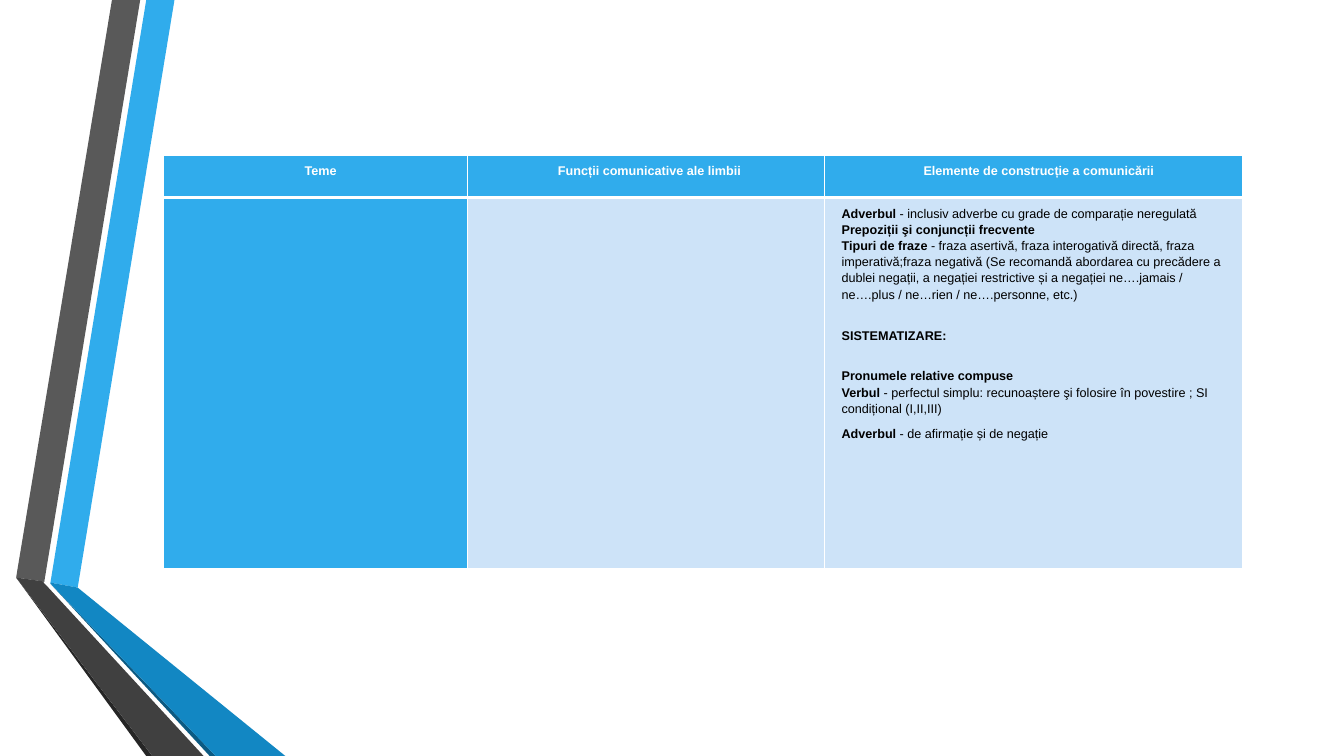
"""Build a slide with a ribbon at the left and a syllabus table."""
import copy
from typing import NamedTuple

import pptx
import pptx.dml.color
import pptx.enum.text
import pptx.oxml
import pptx.oxml.ns
import pptx.util

W, H = pptx.util.Inches(13.33), pptx.util.Inches(7.5)
BLUE, PALE, WHITE, BLACK = "30ACEC", "CDE3F8", "FFFFFF", "000000"
LEFT, TOP = 12.15, 20.53
COLS = (22.65, 26.55, 31.13)
ROWS = (5.6, 49.07)


class Band(NamedTuple):
    """A ribbon part, with points in percent of the slide."""
    color: str
    points: tuple[tuple[float, float], ...]


class Piece(NamedTuple):
    """A stretch of text in one weight; newlines are line breaks."""
    text: str
    bold: bool = False


BANDS = (
    Band(BLUE, ((3.75, 77.07), (5.78, 77.73), (12.98, 0), (10.88, 0))),
    Band("595959", ((10.43, 0), (8.33, 0), (1.2, 76.4), (3.3, 76.93))),
    Band("262626", ((1.2, 76.4), (10.88, 100), (11.33, 100))),
    Band("0C5A82", ((3.75, 77.2), (15.6, 100), (16.05, 100))),
    Band("1287C3", ((3.75, 77.2), (16.05, 100), (21.23, 100), (5.78, 77.73), (3.75, 77.07))),
    Band("404040", ((15.15, 100), (3.6, 77.73), (3.23, 77.07), (3.3, 76.93), (1.2, 76.4),
                    (11.33, 100))),
)
HEADERS = ("Teme", "Funcții comunicative ale limbii ", "Elemente de construcție a comunicării")
CONTENT = (
    (Piece("Adverbul", True),
     Piece(" - inclusiv adverbe cu grade de comparație neregulată \n"),
     Piece("Prepoziții şi conjuncții frecvente\nTipuri de fraze", True),
     Piece(" - fraza asertivă, fraza interogativă directă, fraza imperativă;fraza negativă "
           "(Se recomandă abordarea cu precădere a dublei negații, a negației restrictive "
           "și a negației ne….jamais / ne….plus / ne…rien / ne….personne, etc.)")),
    (Piece("\nSISTEMATIZARE:", True),),
    (Piece("\nPronumele relative compuse\nVerbul", True),
     Piece(" - perfectul simplu: recunoaștere şi folosire în povestire ; SI condițional (I,II,III)")),
    (Piece("Adverbul", True), Piece(" - de afirmație și de negație\n\n")),
)


def rgb(color: str) -> pptx.dml.color.RGBColor:
    return pptx.dml.color.RGBColor.from_string(color)


def across(share: float) -> int:
    return round(W * share / 100)


def down(share: float) -> int:
    return round(H * share / 100)


def draw_band(s, band: Band) -> None:
    (x, y), *rest = [(across(px), down(py)) for px, py in band.points]
    builder = s.shapes.build_freeform(x, y)
    builder.add_line_segments(rest, close=True)
    sp = builder.convert_to_shape()
    sp.shadow.inherit = False
    sp.fill.solid()
    sp.fill.fore_color.rgb = rgb(band.color)
    sp.line.fill.background()


def style_cell(cell, fill: str, top: int, bottom: int) -> None:
    cell.margin_left = cell.margin_right = pptx.util.Inches(0.07)
    cell.margin_top = cell.margin_bottom = pptx.util.Inches(0.07)
    cell.fill.solid()
    cell.fill.fore_color.rgb = rgb(fill)
    ns = pptx.oxml.ns.nsdecls("a")
    borders = (("lnL", 1), ("lnR", 1), ("lnT", top), ("lnB", bottom))
    for i, (side, width) in enumerate(borders):
        cell._tc.get_or_add_tcPr().insert(i, pptx.oxml.parse_xml(
            f'<a:{side} {ns} w="{pptx.util.Pt(width)}"><a:solidFill>'
            f'<a:srgbClr val="{WHITE}"/></a:solidFill></a:{side}>'))


def write_paragraph(p, pieces: tuple[Piece, ...], color: str, align) -> None:
    p.alignment = align
    p.line_spacing = 1.15
    p.space_before = pptx.util.Pt(6)
    p_pr = p._p.get_or_add_pPr()
    p_pr.set("marL", str(pptx.util.Inches(0.1)))
    p_pr.set("indent", "0")
    for piece in pieces:
        for i, line in enumerate(piece.text.split("\n")):
            if i:
                p.add_line_break()
            if line:
                r = p.add_run()
                r.text = line
                r.font.name = "Arial"
                r.font.size = pptx.util.Pt(9)
                r.font.bold = piece.bold
                r.font.color.rgb = rgb(color)
    for br in p._p.findall(pptx.oxml.ns.qn("a:br")):
        br.append(copy.deepcopy(p.runs[0].font._element))


def draw_table(s) -> None:
    table = s.shapes.add_table(len(ROWS), len(COLS), across(LEFT), down(TOP),
                               across(sum(COLS)), down(sum(ROWS))).table
    for row, share in zip(table.rows, ROWS):
        row.height = down(share)
    align = pptx.enum.text.PP_ALIGN
    for i, (share, header) in enumerate(zip(COLS, HEADERS)):
        table.columns[i].width = across(share)
        head = table.cell(0, i)
        style_cell(head, BLUE, 1, 3)
        write_paragraph(head.text_frame.paragraphs[0], (Piece(header, True),), WHITE, align.CENTER)
        style_cell(table.cell(1, i), PALE if i else BLUE, 3, 1)
    tf = table.cell(1, len(COLS) - 1).text_frame
    for i, pieces in enumerate(CONTENT):
        p = tf.add_paragraph() if i else tf.paragraphs[0]
        write_paragraph(p, pieces, BLACK, align.LEFT)


def main() -> None:
    prs = pptx.Presentation()
    prs.slide_width, prs.slide_height = W, H
    s = prs.slides.add_slide(prs.slide_layouts[6])
    for band in BANDS:
        draw_band(s, band)
    draw_table(s)
    prs.save("out.pptx")


if __name__ == "__main__":
    main()
